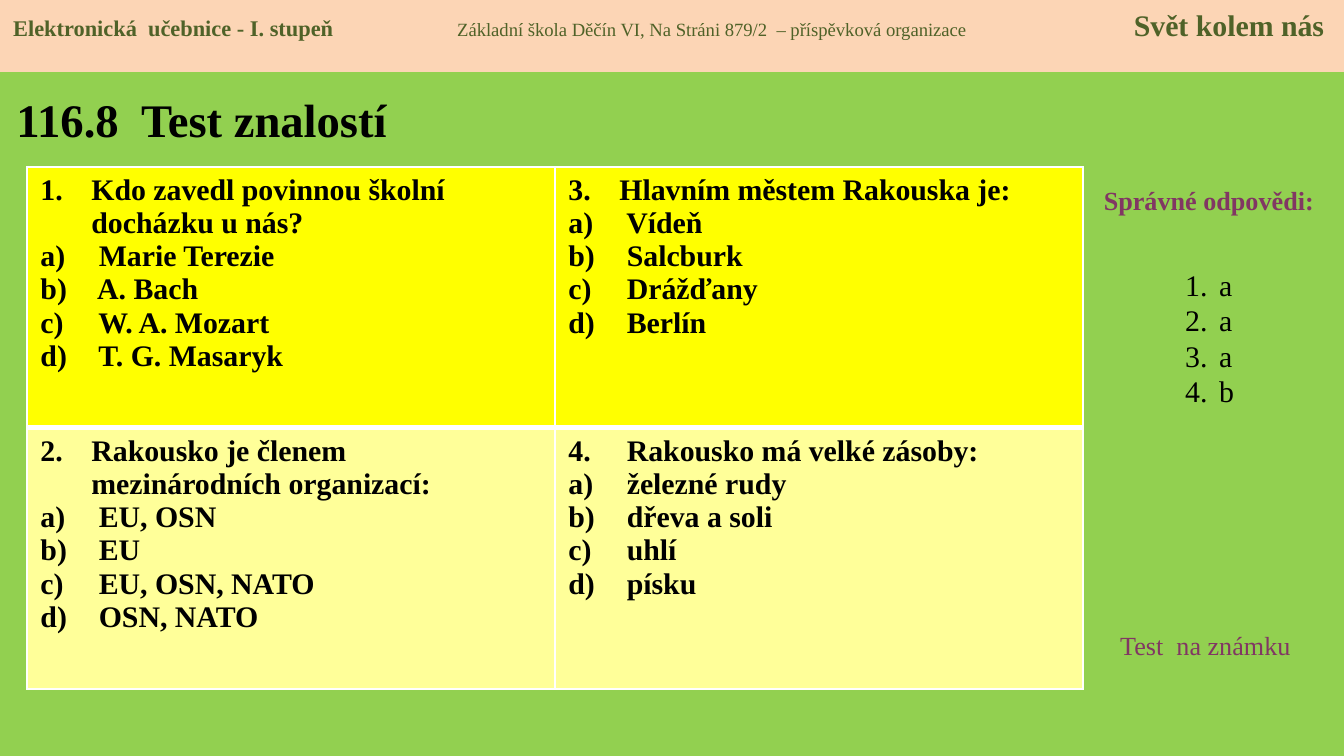
from lxml.etree import SubElement
from pptx import Presentation
from pptx.dml.color import RGBColor as RGB
from pptx.enum.shapes import MSO_SHAPE as SHAPE
from pptx.enum.text import MSO_ANCHOR as ANCHOR, PP_ALIGN as ALIGN
from pptx.oxml.ns import qn
from pptx.util import Pt

PX = 914400 / 134.4
FONT = "Times New Roman"
COLORS = {
    "page": "92D050", "header": "FCD5B5", "header_text": "4F6228",
    "title": "000000", "body": "000000", "accent": "813763",
    "row_top": "FFFF00", "row_bottom": "FFFF99", "border": "FFFFFF",
}
HEADER = [
    ("Elektronická  učebnice - I. stupeň", 12, True),
    ("\tZákladní škola Děčín VI, Na Stráni 879/2  – příspěvková organizace", 10, False),
    ("\tSvět kolem nás", 16, True),
]
QUESTIONS = [
    ["Kdo zavedl povinnou školní docházku u nás?",
     " Marie Terezie", " A. Bach", " W. A. Mozart", " T. G. Masaryk"],
    ["Rakousko je členem mezinárodních organizací:",
     " EU, OSN", " EU", " EU, OSN, NATO", " OSN, NATO"],
    ["Hlavním městem Rakouska je:", " Vídeň", " Salcburk", " Drážďany", " Berlín"],
    [" Rakousko má velké zásoby:", " železné rudy", " dřeva a soli", " uhlí", " písku"],
]
ANSWERS = ["a", "a", "a", "b"]


def px(n):
    """Turn pixels into EMU."""
    return round(n * PX)


def rgb(name):
    """Look up a named colour."""
    return RGB.from_string(COLORS[name])


def add_run(p, text, size, color, bold=False):
    """Append a formatted run to a paragraph."""
    r = p.add_run()
    r.text = text
    for key, value in {"name": FONT, "size": Pt(size), "bold": bold}.items():
        setattr(r.font, key, value)
    r.font.color.rgb = rgb(color)


def number(p, style, start, indent):
    """Give a paragraph an automatic number and a hanging indent."""
    pPr = p._p.get_or_add_pPr()
    pPr.set("marL", str(px(indent)))
    pPr.set("indent", str(-px(indent)))
    SubElement(pPr, qn("a:buFont"), typeface=FONT)
    SubElement(pPr, qn("a:buAutoNum"), type=style, startAt=str(start))


def add_text(s, box, text="", color="body", bold=False, align=ALIGN.LEFT):
    """Add a text box and return its frame."""
    tf = s.shapes.add_textbox(*map(px, box)).text_frame
    tf.word_wrap = True
    if text:
        p = tf.paragraphs[0]
        p.alignment = align
        add_run(p, text, 14, color, bold)
    return tf


def add_header(s, box):
    """Draw the top band with its three tabbed labels."""
    sp = s.shapes.add_shape(SHAPE.RECTANGLE, *map(px, box))
    sp.shadow.inherit = False
    sp.fill.solid()
    sp.fill.fore_color.rgb = rgb("header")
    sp.line.fill.background()
    tf = sp.text_frame
    tf.vertical_anchor = ANCHOR.TOP
    p = tf.paragraphs[0]
    p.alignment = ALIGN.LEFT
    tabs = SubElement(p._p.get_or_add_pPr(), qn("a:tabLst"))
    for pos, algn in ((444, "l"), (1311, "r")):
        SubElement(tabs, qn("a:tab"), pos=str(px(pos)), algn=algn)
    for text, size, bold in HEADER:
        add_run(p, text, size, "header_text", bold)


def add_title(s, box, text):
    """Place and format the title placeholder."""
    sp = s.shapes.title
    for key, value in zip(("left", "top", "width", "height"), box):
        setattr(sp, key, px(value))
    tf = sp.text_frame
    tf.word_wrap = False
    tf.vertical_anchor = ANCHOR.MIDDLE
    p = tf.paragraphs[0]
    p.alignment = ALIGN.LEFT
    add_run(p, text, 25, "title", True)


def set_borders(cell, widths):
    """Draw white cell borders of the given point widths."""
    tcPr = cell._tc.get_or_add_tcPr()
    for side, width in widths.items():
        ln = SubElement(tcPr, qn(f"a:ln{side}"), w=str(Pt(width)))
        fill = SubElement(ln, qn("a:solidFill"))
        SubElement(fill, qn("a:srgbClr"), val=COLORS["border"])


def fill_cell(cell, n, lines, color):
    """Write one numbered question with its lettered choices."""
    cell.fill.solid()
    cell.fill.fore_color.rgb = rgb(color)
    tf = cell.text_frame
    for i, text in enumerate(lines):
        p = tf.add_paragraph() if i else tf.paragraphs[0]
        number(p, "alphaLcParenR" if i else "arabicPeriod", i or n, 51)
        add_run(p, text, 16, "body", True)


def add_questions(s, box):
    """Lay the questions out column by column in a table."""
    table = s.shapes.add_table(2, 2, *map(px, box)).table
    table.first_row = table.horz_banding = False
    for i, lines in enumerate(QUESTIONS):
        col, row = divmod(i, 2)
        cell = table.cell(row, col)
        set_borders(cell, {"L": 1, "R": 1, "T": 1 if row == 0 else 3,
                           "B": 3 if row == 0 else 1})
        fill_cell(cell, i + 1, lines, "row_bottom" if row else "row_top")


def add_answers(s, box):
    """List the correct answers."""
    tf = add_text(s, box)
    tf.margin_top = px(45)
    for i, text in enumerate(ANSWERS):
        p = tf.add_paragraph() if i else tf.paragraphs[0]
        p.line_spacing = Pt(19)
        number(p, "arabicPeriod", 1, 34)
        add_run(p, text, 16, "body")


def main():
    """Build and save the slide."""
    prs = Presentation()
    prs.slide_width, prs.slide_height = px(1344), px(756)
    s = prs.slides.add_slide(prs.slide_layouts[5])
    s.background.fill.solid()
    s.background.fill.fore_color.rgb = rgb("page")
    add_title(s, (3, 75, 429, 87), "116.8  Test znalostí")
    add_text(s, (1082, 178, 254, 46), "Správné odpovědi:", "accent", True, ALIGN.CENTER)
    add_questions(s, (27, 167, 1056, 522))
    add_answers(s, (1172, 222, 74, 267))
    add_text(s, (1107, 623, 211, 46), "Test  na známku", "accent")
    add_header(s, (0, 0, 1344, 72))
    prs.save("out.pptx")


if __name__ == "__main__":
    main()
